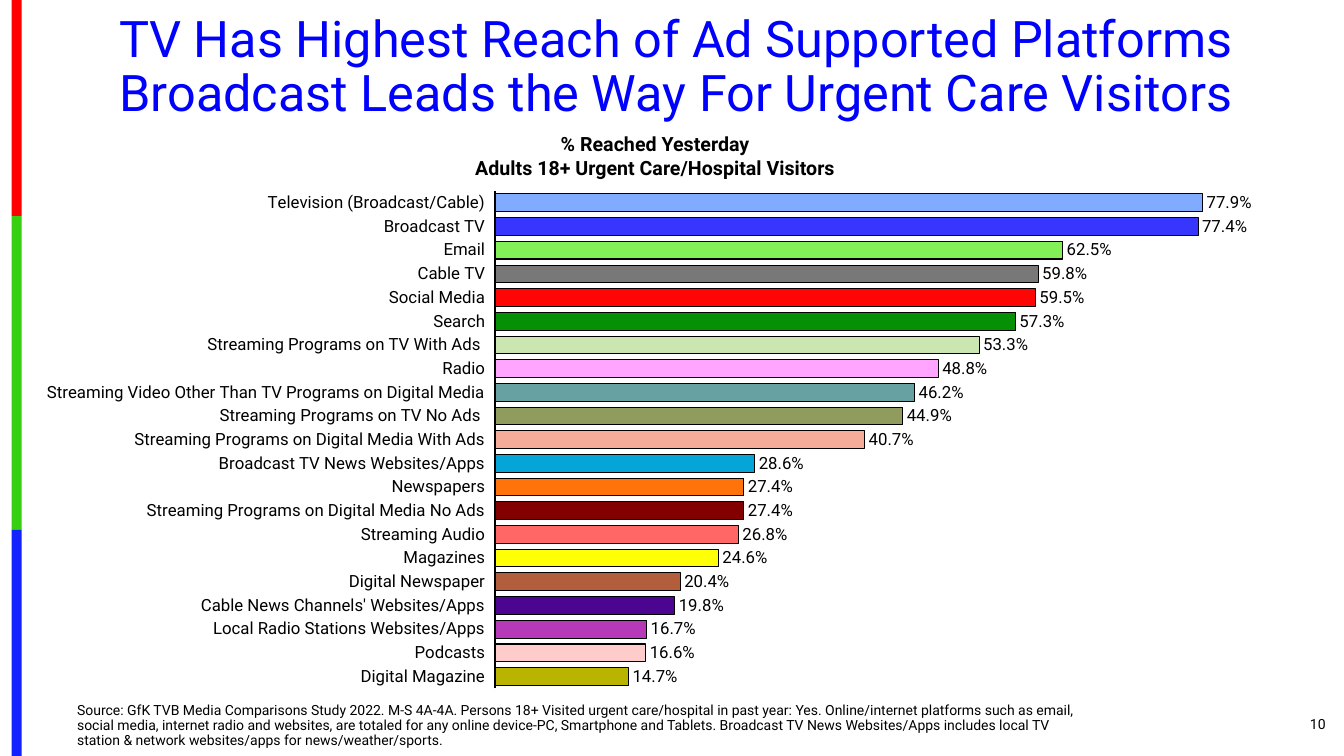
from lxml import etree
from pptx import Presentation
from pptx.chart.data import CategoryChartData
from pptx.dml.color import RGBColor
from pptx.enum.chart import XL_CHART_TYPE as KIND, XL_LABEL_POSITION as SPOT
from pptx.enum.chart import XL_TICK_LABEL_POSITION as TICK_POS, XL_TICK_MARK as TICK
from pptx.enum.shapes import MSO_SHAPE as SHAPE
from pptx.enum.text import MSO_ANCHOR as ANCHOR, PP_ALIGN as ALIGN
from pptx.oxml.ns import qn
from pptx.util import Pt

COLORS = {"black": "000000", "title": "0000FF", "red": "FE0000",
          "green": "36CF12", "blue": "1322FE", "bar": "CCCCCC"}
FACE = "Roboto"
REACH = [
    ("Television (Broadcast/Cable)", 0.779, "80ABFF"),
    ("Broadcast TV", 0.774, "3636FF"),
    ("Email", 0.625, "84F058"),
    ("Cable TV", 0.598, "787878"),
    ("Social Media", 0.595, "FF0505"),
    ("Search", 0.573, "059005"),
    ("Streaming Programs on TV With Ads ", 0.533, "CCE6B2"),
    ("Radio", 0.488, "FFA4FF"),
    ("Streaming Video Other Than TV Programs on Digital Media", 0.462, "67A1A1"),
    ("Streaming Programs on TV No Ads ", 0.449, "909C5E"),
    ("Streaming Programs on Digital Media With Ads", 0.407, "F5AD99"),
    ("Broadcast TV News Websites/Apps", 0.286, "05A4D9"),
    ("Newspapers", 0.274, "FF730A"),
    ("Streaming Programs on Digital Media No Ads", 0.274, "820000"),
    ("Streaming Audio", 0.268, "FF6666"),
    ("Magazines", 0.246, "FFFF05"),
    ("Digital Newspaper", 0.204, "B25E3C"),
    ("Cable News Channels' Websites/Apps", 0.198, "4B0590"),
    ("Local Radio Stations Websites/Apps", 0.167, "B539B8"),
    ("Podcasts", 0.166, "FFCCCC"),
    ("Digital Magazine", 0.147, "B8B400"),
]


def style(font, size, color="black", bold=False):
    font.name, font.size, font.bold = FACE, Pt(size), bold
    font.color.rgb = RGBColor.from_string(COLORS[color])


def write(box, text, size, align, anchor, color="black", bold=False, space=1.0):
    """Fill a text frame, one paragraph a line, in a single style."""
    frame = box.text_frame
    frame.text = text
    frame.word_wrap = True
    frame.vertical_anchor = anchor
    for para in frame.paragraphs:
        para.alignment = align
        para.line_spacing = space
        for run in para.runs:
            style(run.font, size, color, bold)


deck = Presentation()
deck.slide_width, deck.slide_height = Pt(960), Pt(540)
slide = deck.slides.add_slide(deck.slide_layouts[5])
shapes = slide.shapes

# Colour stripe on the left edge
top = 0
for name, end in [("red", 154.5), ("green", 378.5), ("blue", 540)]:
    stripe = shapes.add_shape(SHAPE.RECTANGLE, Pt(8.4), Pt(top), Pt(7.2), Pt(end - top))
    stripe.shadow.inherit = False
    stripe.fill.solid()
    stripe.fill.fore_color.rgb = RGBColor.from_string(COLORS[name])
    stripe.line.fill.background()
    top = end

# Title
title = shapes.title
title.left, title.top, title.width, title.height = Pt(36), Pt(6), Pt(894), Pt(85.5)
write(title, "TV Has Highest Reach of Ad Supported Platforms "
      "Broadcast Leads the Way For Urgent Care Visitors",
      36, ALIGN.CENTER, ANCHOR.MIDDLE, "title", space=0.9)

# Chart
data = CategoryChartData(number_format="0.0%")
data.categories = [label for label, value, color in REACH]
data.add_series("Series 1", [value for label, value, color in REACH])
chart = shapes.add_chart(KIND.BAR_CLUSTERED, Pt(6), Pt(116.5), Pt(942), Pt(376), data).chart
chart.has_legend = chart.has_title = False
style(chart.font, 10)

cat_axis = chart.category_axis
cat_axis.reverse_order = True
cat_axis.major_tick_mark = cat_axis.minor_tick_mark = TICK.NONE
cat_axis.tick_label_position = TICK_POS.LOW
cat_axis.has_major_gridlines = False
style(cat_axis.tick_labels.font, 12)
cat_axis.format.line.color.rgb = RGBColor.from_string(COLORS["black"])
cat_axis.format.line.width = Pt(1.5)

val_axis = chart.value_axis
val_axis.visible = False
val_axis.has_major_gridlines = False
val_axis.minimum_scale, val_axis.maximum_scale = 0, 0.9

plot = chart.plots[0]
plot.gap_width = 34
plot.vary_by_categories = False
series = plot.series[0]
series.format.fill.solid()
series.format.fill.fore_color.rgb = RGBColor.from_string(COLORS["bar"])
for i, (label, value, color) in enumerate(REACH):
    bar = series.points[i].format
    bar.fill.solid()
    bar.fill.fore_color.rgb = RGBColor.from_string(color)
    bar.line.color.rgb = RGBColor.from_string(COLORS["black"])
    bar.line.width = Pt(0.75)

plot.has_data_labels = True
labels = plot.data_labels
labels.show_value = True
labels.number_format, labels.number_format_is_linked = "0.0%", False
labels.position = SPOT.OUTSIDE_END
style(labels.font, 12)

# Fixed inner plot area, as shares of the chart frame
area = chart.element.find(".//" + qn("c:plotArea"))
for old in area.findall(qn("c:layout")):
    area.remove(old)
layout = etree.Element(qn("c:layout"))
manual = etree.SubElement(layout, qn("c:manualLayout"))
for tag, val in [("layoutTarget", "inner"), ("xMode", "edge"), ("yMode", "edge"),
                 ("x", "0.369"), ("y", "0.053"), ("w", "0.62"), ("h", "0.946")]:
    etree.SubElement(manual, qn("c:" + tag)).set("val", val)
area.insert(0, layout)

# Chart heading, source and page number
head = shapes.add_textbox(Pt(228), Pt(91), Pt(480), Pt(41))
write(head, "% Reached Yesterday\nAdults 18+ Urgent Care/Hospital Visitors",
      14, ALIGN.CENTER, ANCHOR.TOP, bold=True)

source = shapes.add_textbox(Pt(48), Pt(498), Pt(738), Pt(40.5))
write(source, "Source: GfK TVB Media Comparisons Study 2022. M-S 4A-4A. Persons 18+ "
      "Visited urgent care/hospital in past year: Yes. Online/internet platforms such as "
      "email, social media, internet radio and websites, are totaled for any online "
      "device-PC, Smartphone and Tablets. Broadcast TV News Websites/Apps includes local "
      "TV station & network websites/apps for news/weather/sports.",
      10, ALIGN.LEFT, ANCHOR.BOTTOM, space=0.9)

page = shapes.add_textbox(Pt(876), Pt(502.5), Pt(78), Pt(29))
write(page, "10", 10, ALIGN.RIGHT, ANCHOR.MIDDLE)

deck.save("out.pptx")
